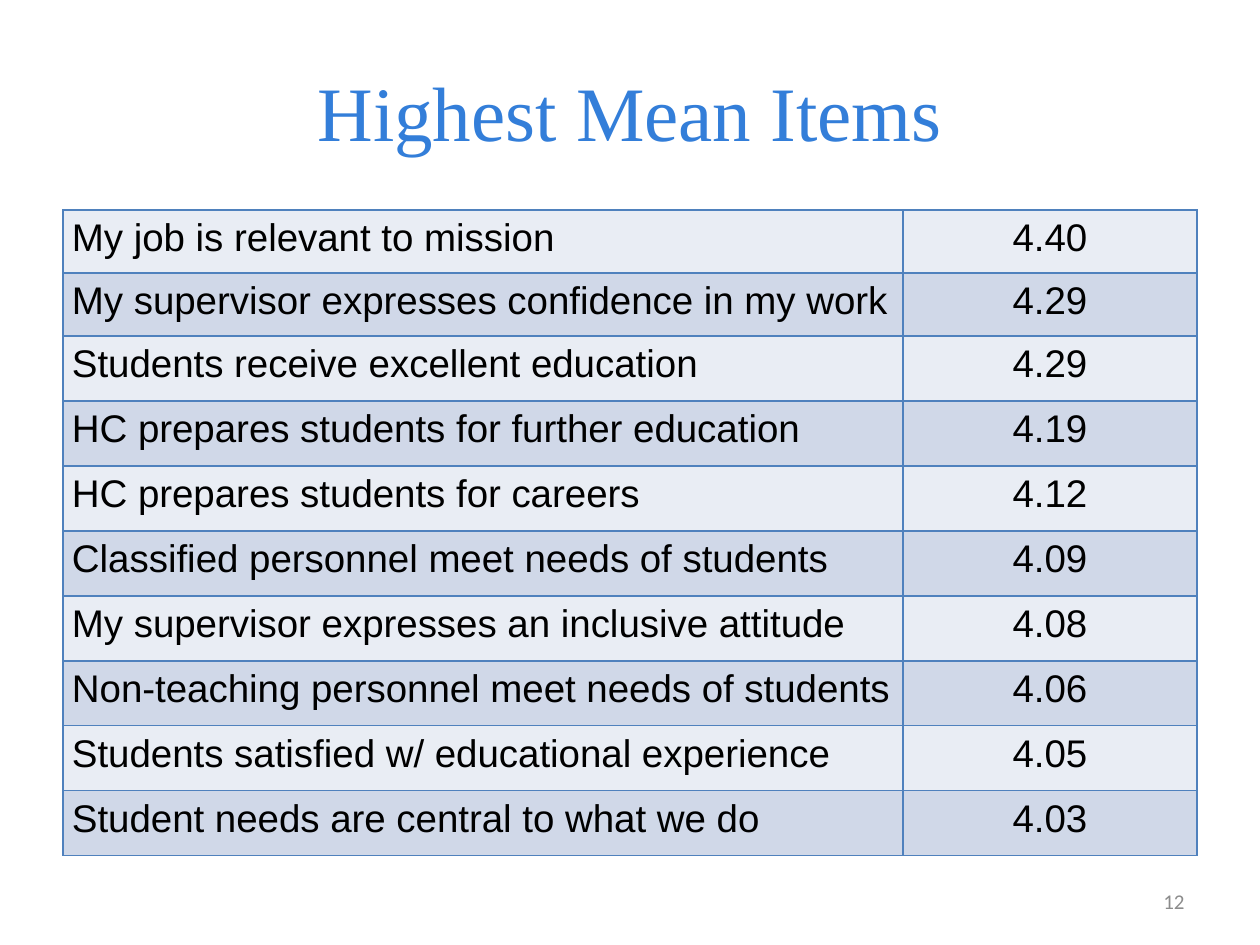
import dataclasses

import pptx
import pptx.dml.color
import pptx.enum.text
import pptx.oxml
import pptx.oxml.ns
import pptx.util

Cm = pptx.util.Cm
Pt = pptx.util.Pt
ALIGN = pptx.enum.text.PP_ALIGN
MIDDLE = pptx.enum.text.MSO_ANCHOR.MIDDLE


@dataclasses.dataclass(frozen=True)
class Theme:
    title_color: str = "337ED9"
    body_color: str = "000000"
    number_color: str = "8C8C8C"
    border_color: str = "4F81BD"
    bands: tuple = ("E9EDF4", "D0D8E8")
    title_size: int = 44
    body_size: int = 22
    number_size: int = 12
    title_font: str = "Times New Roman"
    body_font: str = "Arial"
    number_font: str = "Calibri"


theme = Theme()


def write_text(frame, text, *, font, size, color, align, spacing=1.0):
    para = frame.paragraphs[0]
    para.alignment = align
    para.line_spacing = spacing
    span = para.add_run()
    span.text = text
    span.font.name = font
    span.font.size = Pt(size)
    span.font.color.rgb = pptx.dml.color.RGBColor.from_string(color)


def add_borders(cell, color, width):
    properties = cell._tc.get_or_add_tcPr()
    for side in ("lnL", "lnR", "lnT", "lnB"):
        properties.append(pptx.oxml.parse_xml(
            f'<a:{side} {pptx.oxml.ns.nsdecls("a")} w="{Pt(width)}">'
            f'<a:solidFill><a:srgbClr val="{color}"/></a:solidFill></a:{side}>'))


deck = pptx.Presentation()
deck.slide_width, deck.slide_height = Cm(25.4), Cm(19.05)
page = deck.slides.add_slide(deck.slide_layouts[5])

# Title
title = page.shapes.title
title.left, title.top, title.width, title.height = Cm(1.27), Cm(0.64), Cm(22.86), Cm(3.18)
title.text_frame.vertical_anchor = MIDDLE
write_text(title.text_frame, "Highest Mean Items", font=theme.title_font,
           size=theme.title_size, color=theme.title_color, align=ALIGN.CENTER)

# Table of survey items and their means
items = [
    ("My job is relevant to mission", "4.40"),
    ("My supervisor expresses confidence in my work", "4.29"),
    ("Students receive excellent education", "4.29"),
    ("HC prepares students for further education", "4.19"),
    ("HC prepares students for careers", "4.12"),
    ("Classified personnel meet needs of students", "4.09"),
    ("My supervisor expresses an inclusive attitude", "4.08"),
    ("Non-teaching personnel meet needs of students", "4.06"),
    ("Students satisfied w/ educational experience", "4.05"),
    ("Student needs are central to what we do", "4.03"),
]
row_heights = [Cm(1.27)] * 2 + [Cm(1.31)] * 8
table = page.shapes.add_table(len(items), 2, Cm(1.27), Cm(4.23),
                              Cm(22.86), sum(row_heights)).table
table.first_row = table.horz_banding = False
table.columns[0].width, table.columns[1].width = Cm(16.93), Cm(5.93)

for row_index, item in enumerate(items):
    table.rows[row_index].height = row_heights[row_index]
    band = pptx.dml.color.RGBColor.from_string(theme.bands[row_index % 2])
    for column_index, align in enumerate((ALIGN.LEFT, ALIGN.CENTER)):
        cell = table.cell(row_index, column_index)
        cell.margin_left = cell.margin_right = Cm(0.18)
        cell.margin_top = cell.margin_bottom = 0
        add_borders(cell, theme.border_color, 1)
        cell.fill.solid()
        cell.fill.fore_color.rgb = band
        write_text(cell.text_frame, item[column_index], font=theme.body_font,
                   size=theme.body_size, color=theme.body_color,
                   align=align, spacing=1.15)

# Page number
number_box = page.shapes.add_textbox(Cm(18.2), Cm(17.66), Cm(5.93), Cm(1.01))
number_box.text_frame.word_wrap = True
number_box.text_frame.vertical_anchor = MIDDLE
write_text(number_box.text_frame, "12", font=theme.number_font,
           size=theme.number_size, color=theme.number_color, align=ALIGN.RIGHT)

deck.save("out.pptx")
